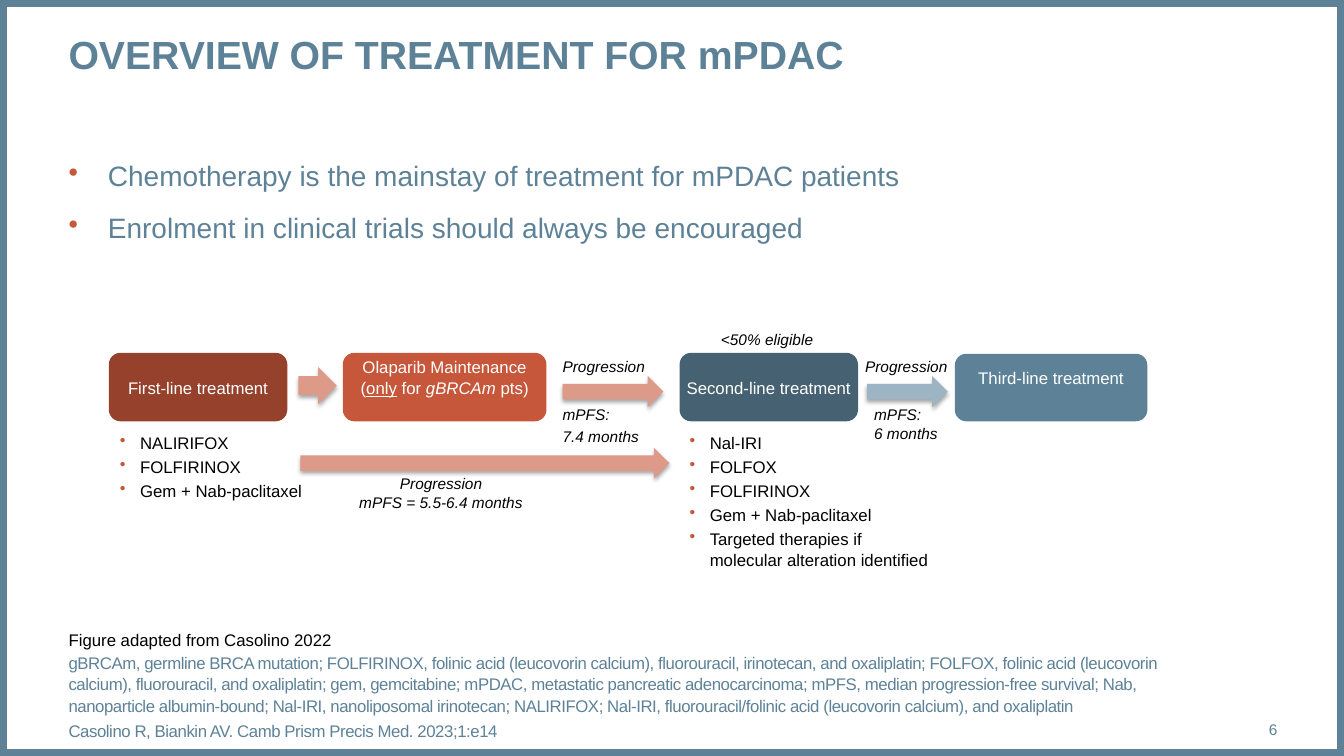
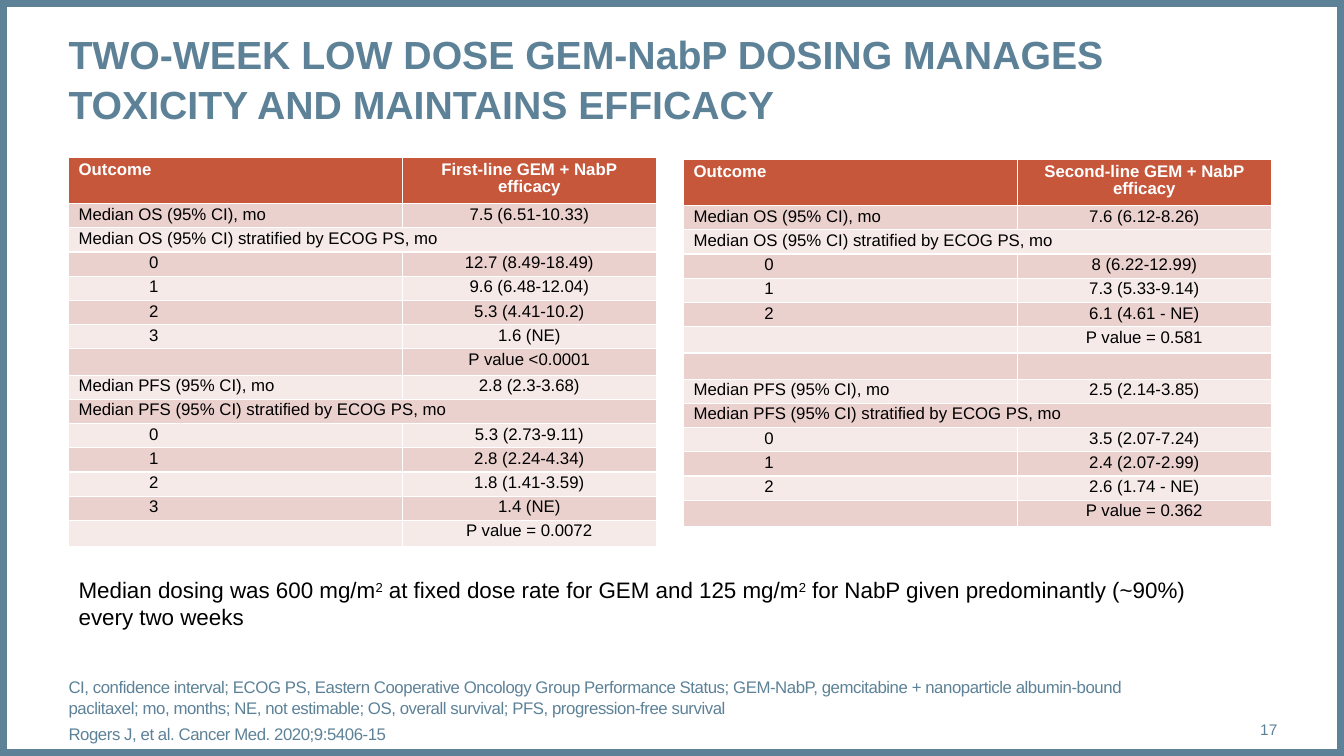
from lxml import etree
from pptx import Presentation
from pptx.dml.color import RGBColor
from pptx.enum.shapes import MSO_SHAPE
from pptx.enum.text import MSO_ANCHOR, MSO_AUTO_SIZE, PP_ALIGN
from pptx.oxml.ns import qn
from pptx.util import Emu, Pt

LEFT, CENTER, RIGHT = PP_ALIGN.LEFT, PP_ALIGN.CENTER, PP_ALIGN.RIGHT
TOP, MIDDLE, BOTTOM = MSO_ANCHOR.TOP, MSO_ANCHOR.MIDDLE, MSO_ANCHOR.BOTTOM
RECTANGLE, ROUNDED, ARROW = MSO_SHAPE.RECTANGLE, MSO_SHAPE.ROUNDED_RECTANGLE, MSO_SHAPE.RIGHT_ARROW

EMU_PER_PX = 9144
WIDTH, HEIGHT = 1333, 750
MARGIN = 68
FONT = "Arial"
BLUE, DARK_BLUE, PALE_BLUE = "5D8298", "466172", "9CB4C3"
RED, DARK_RED, PALE_RED = "C6573B", "95412B", "DD9A89"
BLACK, WHITE = "000000", "FFFFFF"
BANDS = ["F5EAE8", "EAD1CE"]

OVERVIEW = {
    "title": "OVERVIEW OF TREATMENT FOR mPDAC",
    "number": "6",
    "footer_place": (MARGIN, 640, 1113, 95),
    "footer_anchor": BOTTOM,
    "footer": [
        "gBRCAm, germline BRCA mutation; FOLFIRINOX, folinic acid (leucovorin calcium), fluorouracil, "
        "irinotecan, and oxaliplatin; FOLFOX, folinic acid (leucovorin calcium), fluorouracil, and "
        "oxaliplatin; gem, gemcitabine; mPDAC, metastatic pancreatic adenocarcinoma; mPFS, median "
        "progression-free survival; Nab, nanoparticle albumin-bound; Nal-IRI, nanoliposomal irinotecan; "
        "NALIRIFOX; Nal-IRI, fluorouracil/folinic acid (leucovorin calcium), and oxaliplatin",
        "Casolino R, Biankin AV. Camb Prism Precis Med. 2023;1:e14",
    ],
}
KEY_POINTS = [
    "Chemotherapy is the mainstay of treatment for mPDAC patients",
    "Enrolment in clinical trials should always be encouraged",
]
CAPTION = "Figure adapted from Casolino 2022"
STAGES = [
    ((108, 350, 177, 68), DARK_RED, 0, "First-line treatment"),
    ((340, 350, 202, 68), RED, 20, [
        ("Olaparib Maintenance (", ""), ("only", "underline"), (" for ", ""),
        ("gBRCAm ", "italic"), ("pts)", "")]),
    ((674, 350, 177, 68), DARK_BLUE, 0, "Second-line treatment"),
    ((947, 351, 191, 67), BLUE, 20, "Third-line treatment"),
]
ARROWS = [
    ((296, 364, 38, 37), PALE_RED),
    ((298, 444, 366, 31), PALE_RED),
    ((558, 373, 100, 31), PALE_RED),
    ((860, 373, 80, 31), PALE_BLUE),
]
REGIMENS = [
    ((119, 428, 334, 66), ["NALIRIFOX", "FOLFIRINOX", "Gem + Nab-paclitaxel"]),
    ((684, 428, 334, 132), [
        "Nal-IRI", "FOLFOX", "FOLFIRINOX", "Gem + Nab-paclitaxel",
        "Targeted therapies if\vmolecular alteration identified"]),
]
LABELS = [
    ((715, 327, 107, 19), LEFT, ["<50% eligible"]),
    ((558, 353, 107, 19), LEFT, ["Progression"]),
    ((558, 401, 107, 40), LEFT, ["mPFS:", "7.4 months"]),
    ((324, 469, 227, 37), CENTER, ["Progression\vmPFS = 5.5-6.4 months"]),
    ((858, 353, 107, 19), LEFT, ["Progression"]),
    ((867, 401, 107, 37), LEFT, ["mPFS:\v6 months"]),
]

DOSING = {
    "title": "TWO-WEEK LOW DOSE GEM-NabP DOSING MANAGES TOXICITY AND MAINTAINS EFFICACY",
    "number": "17",
    "footer_place": (MARGIN, 669, 1113, 70),
    "footer_anchor": MIDDLE,
    "footer": [
        "CI, confidence interval; ECOG PS, Eastern Cooperative Oncology Group Performance Status; "
        "GEM-NabP, gemcitabine + nanoparticle albumin-bound paclitaxel; mo, months; NE, not estimable; "
        "OS, overall survival; PFS, progression-free survival",
        "Rogers J, et al. Cancer Med. 2020;9:5406-15",
    ],
}
OS_ROW, PFS_ROW = "Median OS (95% CI), mo", "Median PFS (95% CI), mo"
OS_GROUP = "Median OS (95% CI) stratified by ECOG PS, mo"
PFS_GROUP = "Median PFS (95% CI) stratified by ECOG PS, mo"
OUTCOMES = [
    ((68, 156), [
        ("Outcome", "First-line GEM + NabP\vefficacy"),
        (OS_ROW, "7.5 (6.51-10.33)"),
        (OS_GROUP, None),
        ("0", "12.7 (8.49-18.49)"),
        ("1", "9.6 (6.48-12.04)"),
        ("2", "5.3 (4.41-10.2)"),
        ("3", "1.6 (NE)"),
        ("", "P value <0.0001"),
        (PFS_ROW, "2.8 (2.3-3.68)"),
        (PFS_GROUP, None),
        ("0", "5.3 (2.73-9.11)"),
        ("1", "2.8 (2.24-4.34)"),
        ("2", "1.8 (1.41-3.59)"),
        ("3", "1.4 (NE)"),
        ("", "P value = 0.0072"),
    ]),
    ((678, 158), [
        ("Outcome", "Second-line GEM + NabP efficacy"),
        (OS_ROW, "7.6 (6.12-8.26)"),
        (OS_GROUP, None),
        ("0", "8 (6.22-12.99)"),
        ("1", "7.3 (5.33-9.14)"),
        ("2", "6.1 (4.61 - NE)"),
        ("", "P value = 0.581"),
        ("", ""),
        (PFS_ROW, "2.5 (2.14-3.85)"),
        (PFS_GROUP, None),
        ("0", "3.5 (2.07-7.24)"),
        ("1", "2.4 (2.07-2.99)"),
        ("2", "2.6 (1.74 - NE)"),
        ("", "P value = 0.362"),
    ]),
]
COLUMN_WIDTHS = (331, 252)
HEADER_HEIGHT, ROW_HEIGHT, GAP_ROW, GAP_HEIGHT = 44, 23, 7, 25
DOSE_NOTE = [
    ("Median dosing was 600 mg/m", ""), ("2", "superscript"),
    (" at fixed dose rate for GEM and 125 mg/m", ""), ("2", "superscript"),
    (" for NabP given predominantly (~90%) every two weeks", ""),
]


def px(length):
    return Emu(length * EMU_PER_PX)


def color(value):
    return RGBColor.from_string(value)


def add_bullet(para, indent):
    props = para._p.get_or_add_pPr()
    props.set("marL", str(px(indent)))
    props.set("indent", str(px(-indent)))
    bullet_color = etree.SubElement(props, qn("a:buClr"))
    etree.SubElement(bullet_color, qn("a:srgbClr"), val=RED)
    etree.SubElement(props, qn("a:buChar"), char="•")


def write(frame, paragraphs, size, ink, bold=False, italic=False, align=LEFT, anchor=TOP,
          insets=(0, 0, 0, 0), line=1.05, before=0, after=0, bullet=0, tracking=0):
    frame.word_wrap = True
    frame.vertical_anchor = anchor
    frame.margin_left, frame.margin_top, frame.margin_right, frame.margin_bottom = map(px, insets)
    for index, content in enumerate(paragraphs):
        para = frame.paragraphs[0] if index == 0 else frame.add_paragraph()
        styles = {}
        if isinstance(content, str):
            para.text = content
        else:
            for number, (text, style) in enumerate(content):
                para.add_run().text = text
                styles[number] = style
        if bullet:
            add_bullet(para, bullet)
        para.alignment = align
        para.line_spacing = line
        para.space_before = Pt(before if index else 0)
        para.space_after = Pt(after)
        for number, span in enumerate(para.runs):
            style = styles.get(number, "")
            font = span.font
            font.name, font.size, font.bold = FONT, Pt(size), bold
            font.italic = italic or style == "italic"
            font.color.rgb = color(ink)
            if style == "underline":
                font.underline = True
            if style == "superscript":
                span._r.get_or_add_rPr().set("baseline", "30000")
            if tracking:
                span._r.get_or_add_rPr().set("spc", str(tracking))
        if not para.runs:
            etree.SubElement(para._p, qn("a:endParaRPr"), sz=str(size * 100))


def add_text(page, place, paragraphs, size, ink, **options):
    box = page.shapes.add_textbox(*map(px, place))
    write(box.text_frame, paragraphs, size, ink, **options)


def add_block(page, kind, place, fill):
    shape = page.shapes.add_shape(kind, *map(px, place))
    shape.shadow.inherit = False
    shape.line.fill.background()
    shape.fill.solid()
    shape.fill.fore_color.rgb = color(fill)
    return shape


def add_arrow(page, place, fill):
    effects = add_block(page, ARROW, place, fill)._element.spPr.find(qn("a:effectLst"))
    shadow = etree.SubElement(effects, qn("a:outerShdw"), blurRad=str(Pt(3.1)),
                              dist=str(Pt(1.8)), dir="5400000", rotWithShape="0")
    tone = etree.SubElement(shadow, qn("a:srgbClr"), val=BLACK)
    etree.SubElement(tone, qn("a:alpha"), val="35000")


def add_frame(page, layout):
    border = page.shapes.add_shape(RECTANGLE, 0, 0, px(WIDTH), px(HEIGHT))
    border.shadow.inherit = False
    border.fill.background()
    border.line.color.rgb = color(BLUE)
    border.line.width = Pt(10)
    layout.shapes._spTree.append(border._element)


def add_page(deck, layout, content):
    page = deck.slides.add_slide(layout)
    title = page.shapes.title
    title.left, title.top, title.width, title.height = map(px, (MARGIN, 28, 1199, 94))
    title.text_frame.auto_size = MSO_AUTO_SIZE.NONE
    write(title.text_frame, [content["title"]], 28, BLUE, bold=True)
    add_text(page, (1181, 703, 86, 40), [content["number"]], 11, BLUE, align=RIGHT, anchor=MIDDLE)
    add_text(page, content["footer_place"], content["footer"], 12, BLUE,
             anchor=content["footer_anchor"], before=3, tracking=-30)
    return page


def add_outcomes(page, corner, rows):
    heights = [ROW_HEIGHT] * len(rows)
    heights[0], heights[GAP_ROW] = HEADER_HEIGHT, GAP_HEIGHT
    table = page.shapes.add_table(len(rows), len(COLUMN_WIDTHS), *map(px, corner),
                                  px(sum(COLUMN_WIDTHS)), px(sum(heights))).table
    for column, width in zip(table.columns, COLUMN_WIDTHS):
        column.width = px(width)
    for index, (row, height) in enumerate(zip(rows, heights)):
        table.rows[index].height = px(height)
        header = index == 0
        for position, text in enumerate(row):
            cell = table.cell(index, position)
            cell.fill.solid()
            cell.fill.fore_color.rgb = color(RED if header else BANDS[index % 2])
            if text is None:
                table.cell(index, 0).merge(cell)
                continue
            pad = 5 if header else 3
            write(cell.text_frame, [text], 12, WHITE if header else BLACK, bold=header,
                  align=CENTER if position else LEFT, line=0.9)
            cell.margin_left = cell.margin_right = px(10)
            cell.margin_top = cell.margin_bottom = px(pad)
            cell.vertical_anchor = TOP
            if position == 0 and text.isdigit():
                props = cell.text_frame.paragraphs[0]._p.get_or_add_pPr()
                props.set("marL", str(px(50)))
                props.set("indent", str(px(20)))


def build_overview(page):
    add_text(page, (MARGIN, 156, 1199, 137), KEY_POINTS, 20, BLUE, before=12, bullet=39)
    add_text(page, (MARGIN, 624, 281, 20), [CAPTION], 12, BLACK)
    for place, items in REGIMENS:
        add_text(page, place, items, 12, BLACK, after=2, bullet=20)
    for place, align, lines in LABELS:
        add_text(page, place, lines, 11, BLACK, italic=True, align=align, after=2)
    for place, fill, lift, text in STAGES:
        stage = add_block(page, ROUNDED, place, fill)
        stage.adjustments[0] = 0.17
        side = 10 if lift else 0
        write(stage.text_frame, [text], 12, WHITE, align=CENTER, anchor=MIDDLE,
              insets=(side, 0, side, lift))
    for place, fill in ARROWS:
        add_arrow(page, place, fill)


def build_dosing(page):
    for corner, rows in OUTCOMES:
        add_outcomes(page, corner, rows)
    add_text(page, (78, 572, 1130, 54), [DOSE_NOTE], 16, BLACK, line=1.0)


def main():
    deck = Presentation()
    deck.slide_width, deck.slide_height = px(WIDTH), px(HEIGHT)
    layout = deck.slide_layouts[5]
    overview = add_page(deck, layout, OVERVIEW)
    add_frame(overview, layout)
    build_overview(overview)
    build_dosing(add_page(deck, layout, DOSING))
    deck.save("out.pptx")


if __name__ == "__main__":
    main()
